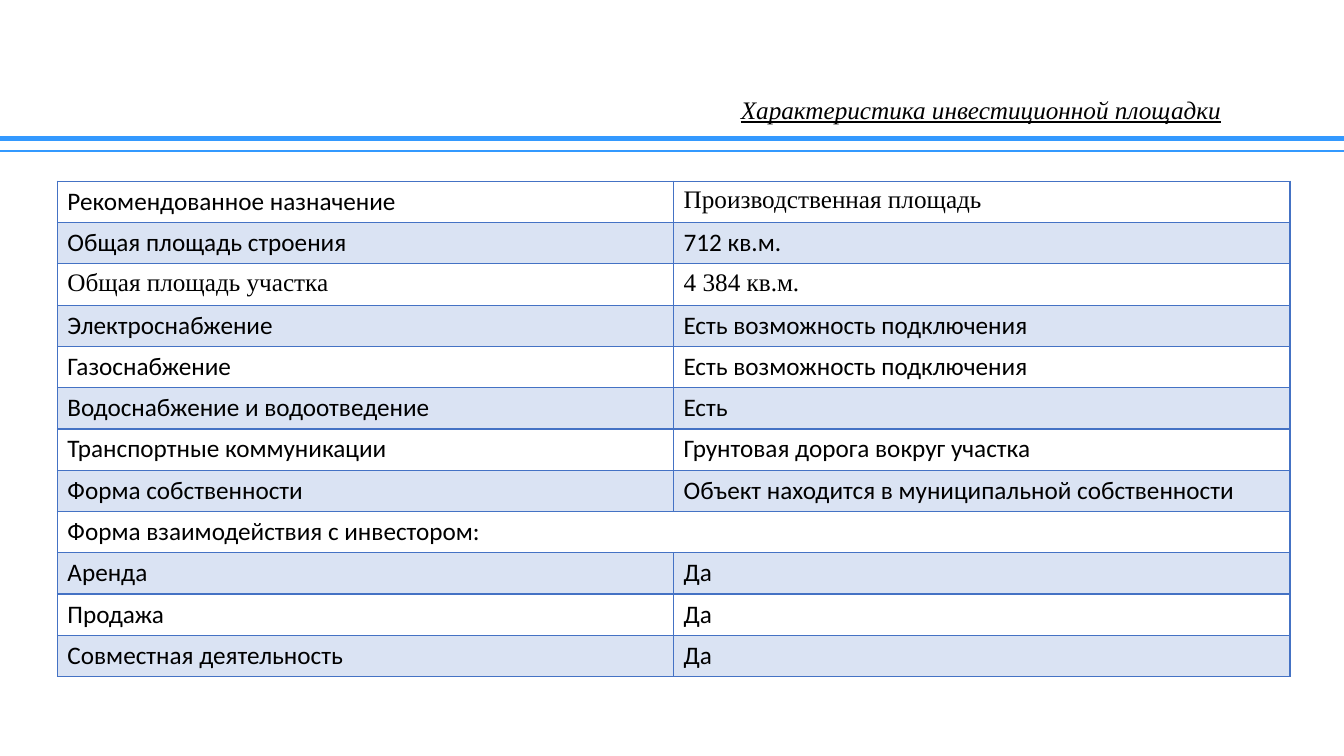
from dataclasses import dataclass

from lxml.etree import SubElement
from pptx import Presentation
from pptx.dml.color import RGBColor
from pptx.enum.shapes import MSO_CONNECTOR
from pptx.enum.text import MSO_ANCHOR, PP_ALIGN
from pptx.oxml.ns import qn
from pptx.util import Pt


@dataclass(frozen=True)
class Theme:
    ink: str = "000000"
    rule: str = "3399FF"
    border: str = "4472C4"
    band: str = "DAE3F3"
    sans: str = "Calibri"
    serif: str = "Times New Roman"
    size: int = 18


THEME = Theme()
PAGE_WIDTH, PAGE_HEIGHT = 960, 540
ROW_HEIGHT = 29.5
COLUMN_WIDTH = 440.2

SITE_ROWS = [
    ("Рекомендованное назначение", "Производственная площадь"),
    ("Общая площадь строения", "712 кв.м."),
    ("Общая площадь участка", "4 384 кв.м."),
    ("Электроснабжение", "Есть возможность подключения"),
    ("Газоснабжение", "Есть возможность подключения"),
    ("Водоснабжение и водоотведение", "Есть"),
    ("Транспортные коммуникации", "Грунтовая дорога вокруг участка"),
    ("Форма собственности", "Объект находится в муниципальной собственности"),
    ("Форма взаимодействия с инвестором:",),
    ("Аренда", "Да"),
    ("Продажа", "Да"),
    ("Совместная деятельность", "Да"),
]
SERIF_CELLS = {(0, 1), (2, 0), (2, 1)}


def write(para, text, **formats):
    span = para.add_run()
    span.text = text
    span.font.color.rgb = RGBColor.from_string(THEME.ink)
    for name, value in {"size": Pt(THEME.size), **formats}.items():
        setattr(span.font, name, value)


def add_title(page, text, left, top, width, height):
    box = page.shapes.add_textbox(Pt(left), Pt(top), Pt(width), Pt(height))
    frame = box.text_frame
    frame.word_wrap = True
    frame.vertical_anchor = MSO_ANCHOR.MIDDLE
    para = frame.paragraphs[0]
    para.alignment = PP_ALIGN.CENTER
    para.line_spacing = 0.9
    write(para, text, name=THEME.serif, italic=True, underline=True)


def add_rule(page, top, weight):
    rule = page.shapes.add_connector(
        MSO_CONNECTOR.STRAIGHT, Pt(0), Pt(top), Pt(PAGE_WIDTH), Pt(top)
    )
    rule.line.color.rgb = RGBColor.from_string(THEME.rule)
    rule.line.width = Pt(weight)
    SubElement(rule._element.spPr, qn("a:effectLst"))


def set_borders(cell):
    properties = cell._tc.get_or_add_tcPr()
    for position, side in enumerate(("lnL", "lnR", "lnT", "lnB")):
        line = properties.makeelement(qn(f"a:{side}"), {"w": str(Pt(1))})
        fill = SubElement(line, qn("a:solidFill"))
        SubElement(fill, qn("a:srgbClr"), val=THEME.border)
        properties.insert(position, line)


def add_site_table(page, left, top):
    table = page.shapes.add_table(
        len(SITE_ROWS), 2, Pt(left), Pt(top),
        Pt(2 * COLUMN_WIDTH), Pt(len(SITE_ROWS) * ROW_HEIGHT),
    ).table
    table.first_row = False
    table.horz_banding = False
    for row_index, texts in enumerate(SITE_ROWS):
        table.rows[row_index].height = Pt(ROW_HEIGHT)
        if len(texts) == 1:
            table.cell(row_index, 0).merge(table.cell(row_index, 1))
        for column_index in range(2):
            cell = table.cell(row_index, column_index)
            if row_index % 2:
                cell.fill.solid()
                cell.fill.fore_color.rgb = RGBColor.from_string(THEME.band)
            else:
                cell.fill.background()
            set_borders(cell)
            if column_index < len(texts):
                serif = (row_index, column_index) in SERIF_CELLS
                write(
                    cell.text_frame.paragraphs[0], texts[column_index],
                    name=THEME.serif if serif else THEME.sans,
                )


def main():
    deck = Presentation()
    deck.slide_width, deck.slide_height = Pt(PAGE_WIDTH), Pt(PAGE_HEIGHT)
    page = deck.slides.add_slide(deck.slide_layouts[6])
    add_rule(page, top=99, weight=3.5)
    add_rule(page, top=108, weight=1.5)
    add_title(page, "Характеристика инвестиционной площадки", 480, 69.5, 441.5, 19.5)
    add_site_table(page, left=41, top=129.5)
    deck.save("out.pptx")


if __name__ == "__main__":
    main()
